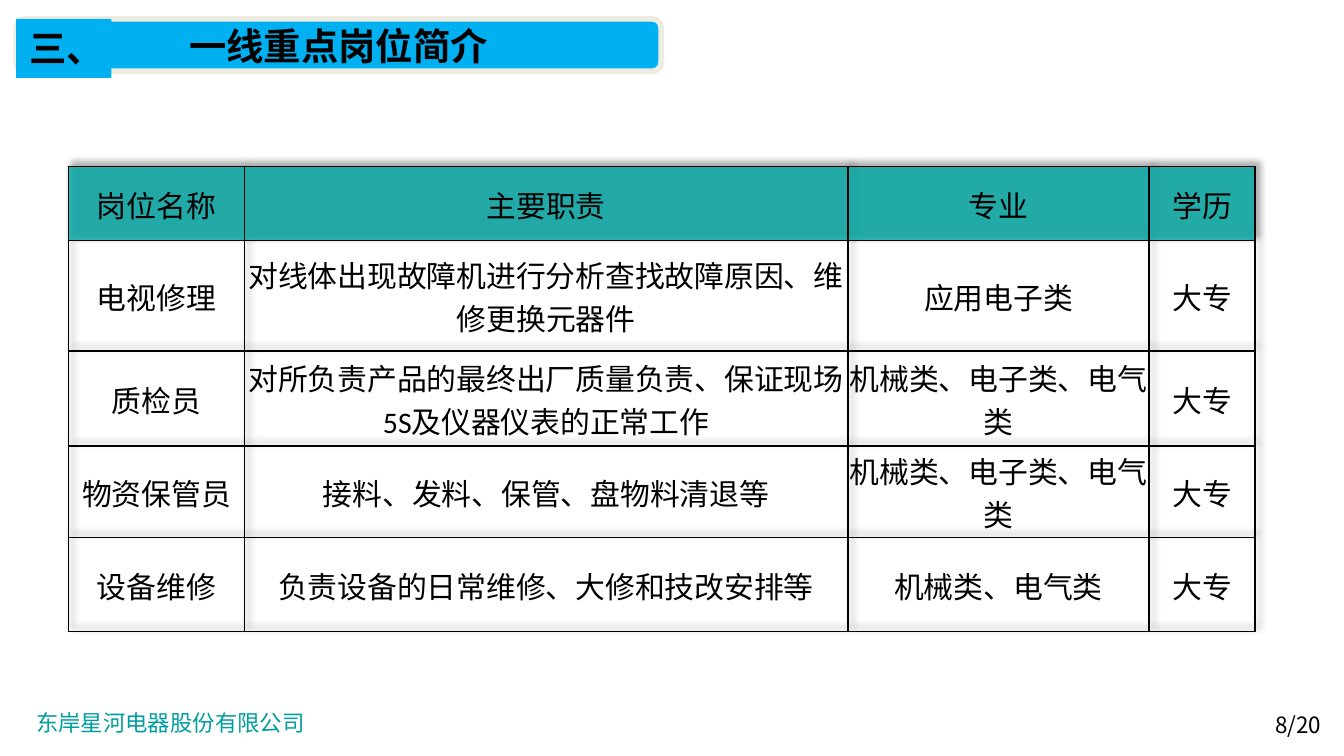
from lxml.etree import SubElement, fromstring
from pptx import Presentation
from pptx.dml.color import RGBColor
from pptx.enum.shapes import MSO_SHAPE
from pptx.enum.text import MSO_ANCHOR, PP_ALIGN
from pptx.oxml.ns import nsdecls, qn
from pptx.util import Inches, Pt

COLORS = {"black": "000000", "blue": "00B0F0", "cream": "EEECE1",
          "teal": "00A9A6", "footer": "009EA1"}
CJK_FONT = "Noto Sans CJK SC"
TABLE_FONT = "Calibri"

COLUMN_WIDTHS = [1.31, 4.49, 2.24, 0.79]
ROW_HEIGHTS = [0.55, 0.82, 0.71, 0.68, 0.7]
JOBS = [
    ["岗位名称", "主要职责", "专业", "学历"],
    ["电视修理", "对线体出现故障机进行分析查找故障原因、维修更换元器件", "应用电子类", "大专"],
    ["质检员", "对所负责产品的最终出厂质量负责、保证现场5S及仪器仪表的正常工作",
     "机械类、电子类、电气类", "大专"],
    ["物资保管员", "接料、发料、保管、盘物料清退等", "机械类、电子类、电气类", "大专"],
    ["设备维修", "负责设备的日常维修、大修和技改安排等", "机械类、电气类", "大专"],
]


def rgb(name):
    return RGBColor.from_string(COLORS[name])


def write(frame, text, size, color="black", font=CJK_FONT, bold=False,
          align=PP_ALIGN.LEFT):
    para = frame.paragraphs[0]
    para.alignment = align
    span = para.add_run()
    span.text = text
    span.font.size = Pt(size)
    span.font.bold = bold
    span.font.name = font
    span.font.color.rgb = rgb(color)
    # East Asian typeface for the Chinese characters
    SubElement(span.font._element, qn("a:ea")).set("typeface", CJK_FONT)


def add_bar(page, kind, left, top, width, height):
    bar = page.shapes.add_shape(kind, Inches(left), Inches(top),
                                Inches(width), Inches(height))
    bar.shadow.inherit = False
    bar.fill.solid()
    bar.fill.fore_color.rgb = rgb("blue")
    bar.line.fill.background()
    return bar


def add_heading(page, left, top, width):
    # Rounded title bar
    bar = add_bar(page, MSO_SHAPE.ROUNDED_RECTANGLE, left, top, width, 0.39)
    bar.line.color.rgb = rgb("cream")
    bar.line.width = Pt(3)
    frame = bar.text_frame
    frame.word_wrap = False
    frame.vertical_anchor = MSO_ANCHOR.MIDDLE
    frame.margin_left = frame.margin_right = Inches(0.08)
    frame.margin_top = frame.margin_bottom = Inches(0.04)
    write(frame, "一线重点岗位简介", 20, bold=True, align=PP_ALIGN.CENTER)

    # Section number over its left end
    number = add_bar(page, MSO_SHAPE.RECTANGLE, left, top, 0.71, 0.44)
    number.text_frame.word_wrap = True
    number.text_frame.vertical_anchor = MSO_ANCHOR.TOP
    write(number.text_frame, "三、", 20, bold=True)


def add_borders(cell):
    properties = cell._tc.get_or_add_tcPr()
    for side in ("lnL", "lnR", "lnT", "lnB"):
        line = SubElement(properties, qn(f"a:{side}"), w=str(Pt(1)))
        fill = SubElement(line, qn("a:solidFill"))
        SubElement(fill, qn("a:srgbClr"), val=COLORS["black"])


def fill_cell(cell, is_header):
    if not is_header:
        cell.fill.background()
        return
    cell.fill.solid()
    cell.fill.fore_color.rgb = rgb("teal")
    color = cell._tc.tcPr.find(qn("a:solidFill")).find(qn("a:srgbClr"))
    SubElement(color, qn("a:alpha"), val="80000")


def add_job_table(page, left, top):
    table = page.shapes.add_table(
        len(ROW_HEIGHTS), len(COLUMN_WIDTHS), Inches(left), Inches(top),
        Inches(sum(COLUMN_WIDTHS)), Inches(sum(ROW_HEIGHTS))).table
    table.horz_banding = False
    for column, width in zip(table.columns, COLUMN_WIDTHS):
        column.width = Inches(width)
    for row, height in zip(table.rows, ROW_HEIGHTS):
        row.height = Inches(height)

    # Soft shadow towards the upper right
    table._tbl.tblPr.insert(0, fromstring(
        f'<a:effectLst {nsdecls("a")}>'
        '<a:outerShdw blurRad="50800" dist="38100" dir="18900000" algn="bl" rotWithShape="0">'
        f'<a:srgbClr val="{COLORS["black"]}"><a:alpha val="40000"/></a:srgbClr>'
        '</a:outerShdw></a:effectLst>'))

    for row_index, job in enumerate(JOBS):
        for column_index, text in enumerate(job):
            cell = table.cell(row_index, column_index)
            cell.vertical_anchor = MSO_ANCHOR.MIDDLE
            cell.margin_left = cell.margin_right = cell.margin_top = Inches(0.01)
            cell.margin_bottom = 0
            add_borders(cell)
            fill_cell(cell, row_index == 0)
            write(cell.text_frame, text, 16, font=TABLE_FONT, align=PP_ALIGN.CENTER)


def add_footer_text(page, left, top, width, text, color, wrap):
    box = page.shapes.add_textbox(Inches(left), Inches(top), Inches(width), Inches(0.3))
    box.text_frame.word_wrap = wrap
    write(box.text_frame, text, 12, color)


def main():
    deck = Presentation()
    deck.slide_width = Inches(10)
    deck.slide_height = deck.slide_width * 9 // 16
    page = deck.slides.add_slide(deck.slide_layouts[6])

    add_footer_text(page, 0.17, 5.23, 2.22, "东岸星河电器股份有限公司", "footer", False)
    add_heading(page, 0.12, 0.14, 4.8)
    add_job_table(page, 0.51, 1.24)
    add_footer_text(page, 9.39, 5.24, 0.61, "8/20", "black", True)
    deck.save("out.pptx")


if __name__ == "__main__":
    main()
